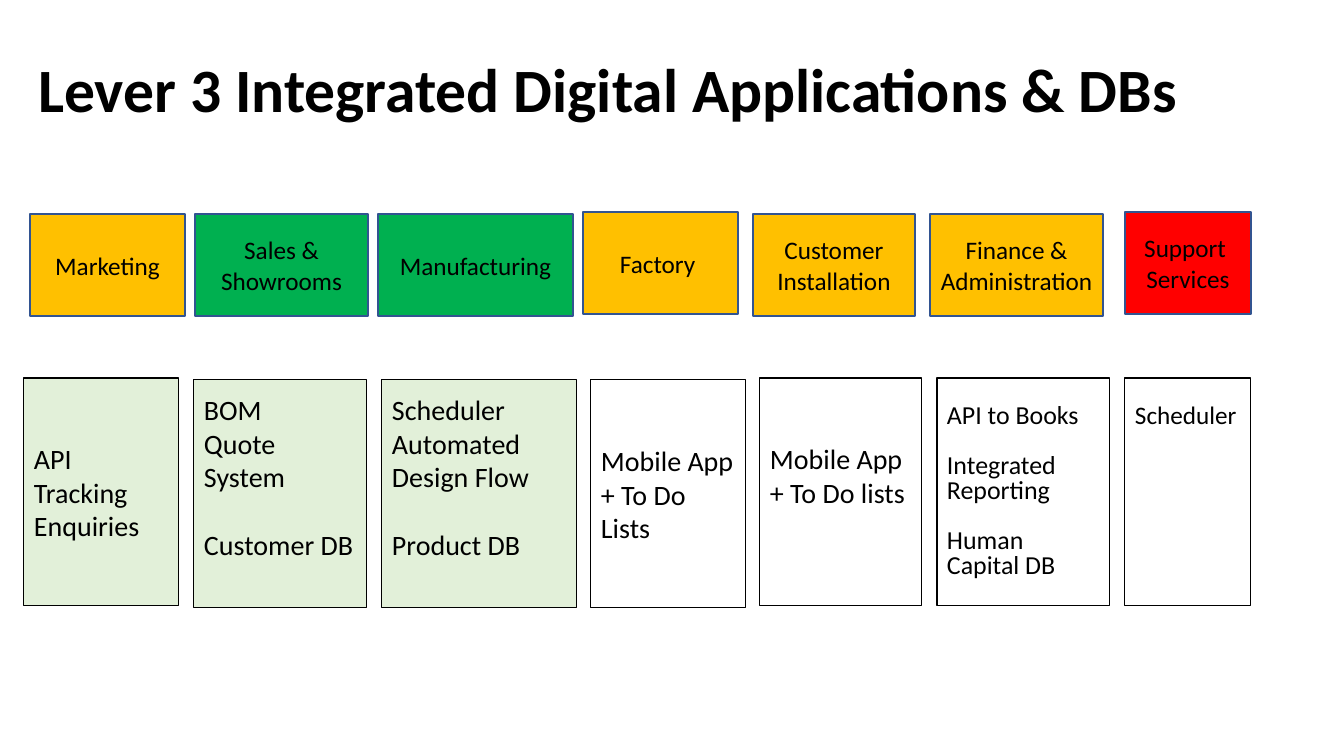
from pptx import Presentation, util as u
from pptx.dml.color import RGBColor
from pptx.enum import shapes, text

PX = 914400 / 100.8
AMBER, GREEN, RED, PALE = "FFC000", "00B050", "FF0000", "E2F0D9"
BLACK, BLUE = "000000", "325491"
LEFT, CENTER = text.PP_ALIGN.LEFT, text.PP_ALIGN.CENTER
TOP, MIDDLE = text.MSO_ANCHOR.TOP, text.MSO_ANCHOR.MIDDLE


def px(n):
    return u.Emu(round(n * PX))


def color(value):
    return RGBColor.from_string(value)


class Board:
    font = "Calibri"

    def __init__(self, slide):
        self.slide = slide

    def set_lines(self, frame, lines, size, align=LEFT, anchor=MIDDLE, bold=False,
                  spacing=None, gaps=(), left=10, top=5, bottom=5):
        """Fill a frame; gaps holds the lines that follow one line of space."""
        frame.word_wrap = True
        frame.vertical_anchor = anchor
        frame.margin_left, frame.margin_right = px(left), px(10)
        frame.margin_top, frame.margin_bottom = px(top), px(bottom)
        frame.text = "\n".join(lines)
        for number, paragraph in enumerate(frame.paragraphs):
            paragraph.alignment = align
            if spacing:
                paragraph.line_spacing = spacing
            if number in gaps:
                paragraph.space_before = u.Pt(round(size * 1.22 * (spacing or 1), 1))
            for run in paragraph.runs:
                run.font.name, run.font.size = self.font, u.Pt(size)
                run.font.bold = bold
                run.font.color.rgb = color(BLACK)

    def title(self, box, wording):
        heading = self.slide.shapes.add_textbox(*map(px, box))
        self.set_lines(heading.text_frame, [wording], 44, bold=True, spacing=0.9, left=38)

    def card(self, box, fill, line, width, lines, size, **style):
        card = self.slide.shapes.add_shape(shapes.MSO_SHAPE.RECTANGLE, *map(px, box))
        card.shadow.inherit = False
        if fill:
            card.fill.solid()
            card.fill.fore_color.rgb = color(fill)
        else:
            card.fill.background()
        card.line.color.rgb = color(line)
        card.line.width = u.Pt(width)
        self.set_lines(card.text_frame, lines, size, **style)


# Departments: left, top, width, fill, name
DEPARTMENTS = [
    (30, 214, 155, AMBER, ["Marketing"]),
    (195, 214, 173, GREEN, ["Sales &", "Showrooms"]),
    (378, 214, 195, GREEN, ["Manufacturing"]),
    (583, 212, 155, AMBER, ["Factory "]),
    (753, 214, 162, AMBER, ["Customer Installation"]),
    (930, 214, 173, AMBER, ["Finance &", "Administration"]),
    (1125, 212, 126, RED, ["Support ", "Services"]),
]

# Applications under each department: left, top, fill, lines, size, style
RAISED = {"bottom": 39}
APPLICATIONS = [
    (24, 378, PALE, ["API Tracking Enquiries"], 20, {}),
    (194, 380, PALE, ["BOM", "Quote System", "Customer DB"], 20,
     {"gaps": [2], **RAISED}),
    (382, 380, PALE, ["Scheduler", "Automated Design Flow", "Product DB"], 20,
     {"gaps": [2], **RAISED}),
    (591, 380, None, ["Mobile App + To Do Lists"], 20, {}),
    (760, 378, None, ["Mobile App + To Do lists"], 20, RAISED),
    (937, 378, None, ["API to Books", "Integrated", "Reporting", "Human Capital DB"],
     18.5, {"gaps": [1, 3], "spacing": 0.8}),
    (1125, 378, None, ["Scheduler"], 18, {"anchor": TOP, "top": 21}),
]


def main():
    deck = Presentation()
    deck.slide_width, deck.slide_height = px(1344), px(756)
    board = Board(deck.slides.add_slide(deck.slide_layouts[6]))

    board.title((0, 20, 1251, 146), "Lever 3 Integrated Digital Applications & DBs")

    # Each application card is as wide as its department
    for department, application in zip(DEPARTMENTS, APPLICATIONS):
        left, top, width, fill, name = department
        board.card((left, top, width, 102), fill, BLUE, 1, name, 18, align=CENTER)
        left, top, fill, lines, size, style = application
        board.card((left, top, width, 228), fill, BLACK, 0.75, lines, size, **style)

    deck.save("out.pptx")


if __name__ == "__main__":
    main()
